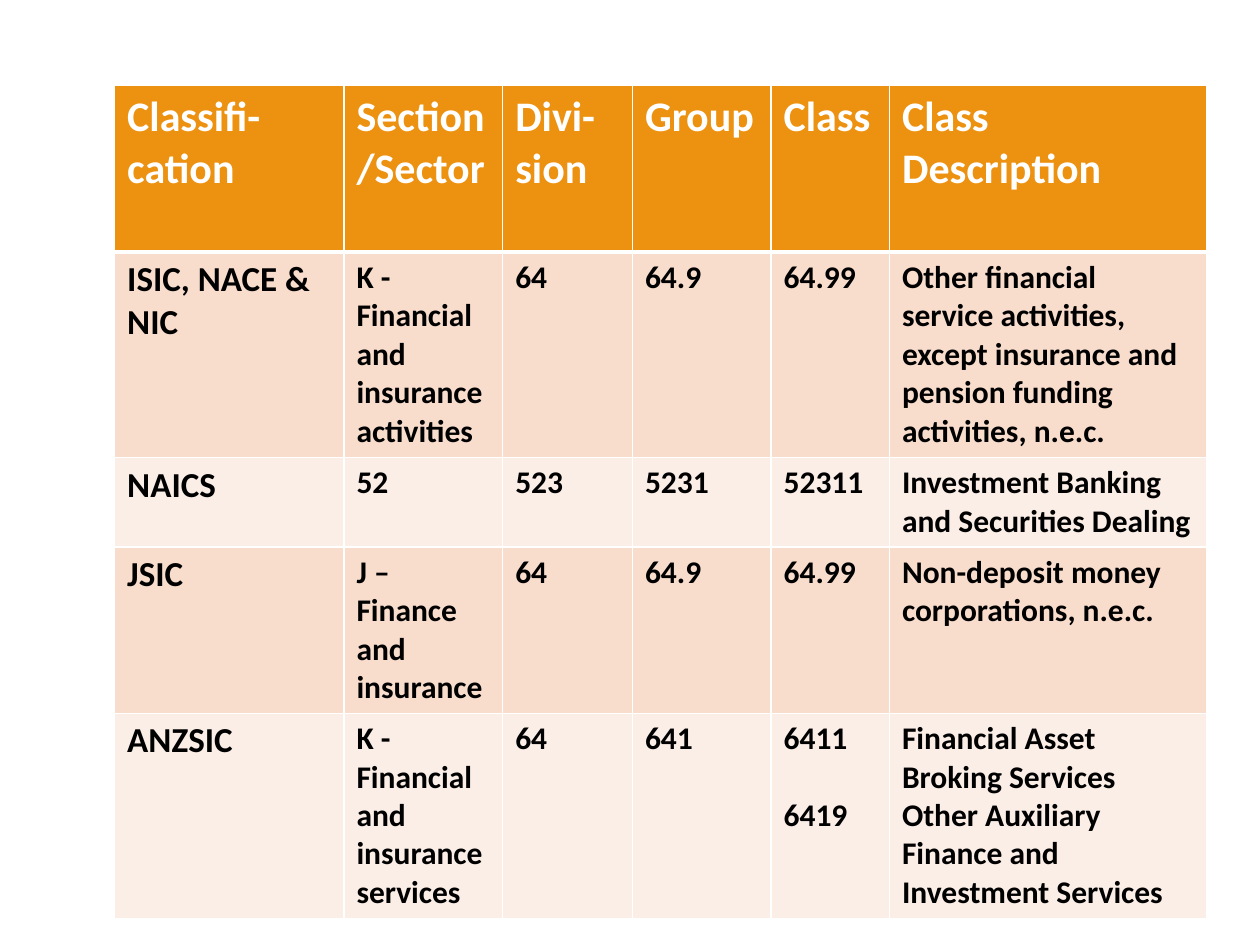
from lxml import etree
from pptx import Presentation
from pptx.dml.color import RGBColor
from pptx.oxml.ns import qn
from pptx.util import Inches, Pt

# Content: one entry per row; a list in a cell holds several paragraphs
HEADER = ["Classifi-cation", "Section/Sector", "Divi-sion", "Group", "Class",
          "Class Description"]
CLASSIFICATIONS = [
    ["ISIC, NACE & NIC", "K - Financial and insurance activities", "64", "64.9", "64.99",
     "Other financial service activities, except insurance and pension funding "
     "activities, n.e.c."],
    ["NAICS", "52", "523", "5231", "52311", "Investment Banking and Securities Dealing"],
    ["JSIC", "J – Finance and insurance", "64", "64.9", "64.99",
     "Non-deposit money corporations, n.e.c."],
    ["ANZSIC", "K - Financial and insurance services", "64", "641", ["6411", "6419"],
     ["Financial Asset Broking Services",
      "Other Auxiliary Finance and Investment Services"]],
]
CLASS_COLUMN = 4

THEME = {
    "font": "Calibri",
    "header_size": 24, "name_size": 20, "body_size": 18,
    "header_fill": "EC9210", "band_fills": ["F8DCCC", "FBEEE7"],
    "header_text": "FFFFFF", "body_text": "000000",
    "border": "FFFFFF", "border_width": 1, "header_rule": 3,
    "class_gap": 22,  # one empty line between the two class codes
}

# Layout in inches
TABLE_LEFT, TABLE_TOP = 0.91, 0.68
COLUMN_WIDTHS = [1.82, 1.26, 1.03, 1.1, 0.94, 2.52]
ROW_HEIGHTS = [1.32, 1.63, 0.71, 1.32, 1.63]


def add_borders(cell, row):
    """Draw thin borders, with a thicker rule between header and body."""
    properties = cell._tc.get_or_add_tcPr()
    for side in ("lnL", "lnR", "lnT", "lnB"):
        under_header = (row, side) in ((0, "lnB"), (1, "lnT"))
        width = THEME["header_rule" if under_header else "border_width"]
        line = etree.SubElement(properties, qn(f"a:{side}"), w=str(Pt(width)))
        fill = etree.SubElement(line, qn("a:solidFill"))
        etree.SubElement(fill, qn("a:srgbClr"), val=THEME["border"])


def cell_style(row, column):
    """Return fill, text colour and type size for a cell."""
    if row == 0:
        return THEME["header_fill"], THEME["header_text"], THEME["header_size"]
    size = THEME["name_size" if column == 0 else "body_size"]
    return THEME["band_fills"][(row - 1) % 2], THEME["body_text"], size


def fill_cell(cell, content, row, column):
    fill, color, size = cell_style(row, column)
    add_borders(cell, row)
    cell.fill.solid()
    cell.fill.fore_color.rgb = RGBColor.from_string(fill)

    lines = content if isinstance(content, list) else [content]
    cell.text_frame.text = "\n".join(lines)
    for index, paragraph in enumerate(cell.text_frame.paragraphs):
        if index and column == CLASS_COLUMN:
            paragraph.space_before = Pt(THEME["class_gap"])
        for run in paragraph.runs:
            run.font.name = THEME["font"]
            run.font.size = Pt(size)
            run.font.bold = True
            run.font.color.rgb = RGBColor.from_string(color)


def main():
    presentation = Presentation()
    presentation.slide_width, presentation.slide_height = Inches(10), Inches(7.5)
    slide = presentation.slides.add_slide(presentation.slide_layouts[6])

    # Comparison table
    rows = [HEADER] + CLASSIFICATIONS
    table = slide.shapes.add_table(
        len(rows), len(HEADER), Inches(TABLE_LEFT), Inches(TABLE_TOP),
        Inches(sum(COLUMN_WIDTHS)), Inches(sum(ROW_HEIGHTS))).table
    for column, width in zip(table.columns, COLUMN_WIDTHS):
        column.width = Inches(width)
    for table_row, height in zip(table.rows, ROW_HEIGHTS):
        table_row.height = Inches(height)

    for row, contents in enumerate(rows):
        for column, content in enumerate(contents):
            fill_cell(table.cell(row, column), content, row, column)

    presentation.save("out.pptx")


if __name__ == "__main__":
    main()
